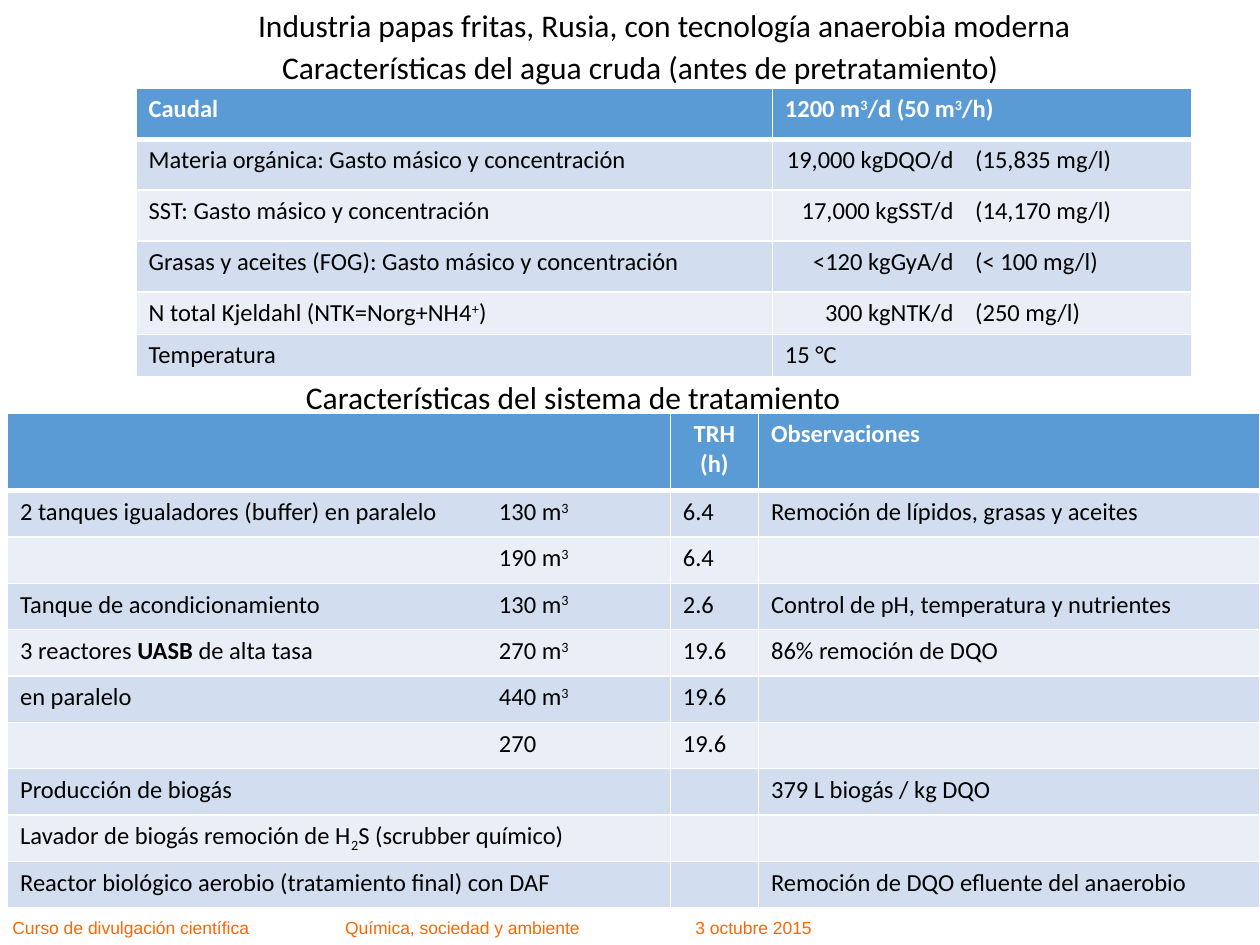
from dataclasses import dataclass
from lxml.etree import SubElement
from pptx import Presentation
from pptx.dml.color import RGBColor
from pptx.enum.text import PP_ALIGN
from pptx.oxml.ns import qn
from pptx.util import Inches, Pt


@dataclass(frozen=True)
class Theme:
    font: str = "Calibri"
    foot: str = "Arial"
    ink: str = "000000"
    white: str = "FFFFFF"
    orange: str = "FF6600"
    head: str = "5B9BD5"
    bands: tuple = ("D2DEEF", "EAEFF7")
    big: int = 18
    body: int = 14
    small: int = 10
    thin: int = 1
    thick: int = 3


@dataclass(frozen=True)
class Box:
    x: float
    y: float
    w: float
    h: float


@dataclass(frozen=True)
class Label:
    text: str
    box: Box
    size: int
    name: str
    color: str
    tabs: tuple = ()


@dataclass(frozen=True)
class Grid:
    box: Box
    cols: tuple
    rows: tuple
    cells: tuple
    tabs: dict
    mid: tuple = ()


THEME = Theme()
UNIT = 0.1
WIDE, HIGH = 100, 75
MARKS = {"^": {"baseline": "30000"}, "_": {"baseline": "-25000"}, "*": {"b": "1"}}


def span(n: float) -> int:
    return Inches(n * UNIT)


def place(box: Box) -> tuple:
    return tuple(span(n) for n in (box.x, box.y, box.w, box.h))


def write(frame, text: str, look: dict, tabs: tuple = (), align=PP_ALIGN.LEFT) -> None:
    para = frame.paragraphs[0]
    para.alignment = align
    if tabs:
        stops = SubElement(para._p.get_or_add_pPr(), qn("a:tabLst"))
        for pos, side in tabs:
            SubElement(stops, qn("a:tab"), pos=str(span(pos)), algn=side)
    for part in filter(None, text.split("|")):
        mark = MARKS.get(part[0], {})
        run = para.add_run()
        run.text = part[1:] if mark else part
        for key, val in look.items():
            if key == "color":
                run.font.color.rgb = RGBColor.from_string(val)
            else:
                setattr(run.font, key, val)
        for key, val in mark.items():
            run._r.get_or_add_rPr().set(key, val)
    SubElement(para._p, qn("a:endParaRPr"), sz=str(look["size"].centipoints))


def draw_label(slide, label: Label) -> None:
    frame = slide.shapes.add_textbox(*place(label.box)).text_frame
    frame.word_wrap = True
    look = {"size": Pt(label.size), "name": label.name, "color": label.color}
    write(frame, label.text, look, label.tabs)


def edge(cell, row: int) -> None:
    props = cell._tc.get_or_add_tcPr()
    heavy = {0: "lnB", 1: "lnT"}.get(row)
    for side in ("lnL", "lnR", "lnT", "lnB"):
        width = THEME.thick if side == heavy else THEME.thin
        line = SubElement(props, qn(f"a:{side}"), w=str(Pt(width)))
        fill = SubElement(line, qn("a:solidFill"))
        SubElement(fill, qn("a:srgbClr"), val=THEME.white)


def draw_grid(slide, grid: Grid) -> None:
    table = slide.shapes.add_table(len(grid.rows), len(grid.cols), *place(grid.box)).table
    for col, size in zip(table.columns, grid.cols):
        col.width = span(size)
    for row, size in zip(table.rows, grid.rows):
        row.height = span(size)
    for r, texts in enumerate(grid.cells):
        top = r == 0
        look = {
            "size": Pt(THEME.body),
            "name": THEME.font,
            "bold": top,
            "color": THEME.white if top else THEME.ink,
        }
        for c, text in enumerate(texts):
            cell = table.cell(r, c)
            edge(cell, r)
            cell.fill.solid()
            tint = THEME.head if top else THEME.bands[(r - 1) % 2]
            cell.fill.fore_color.rgb = RGBColor.from_string(tint)
            align = PP_ALIGN.CENTER if (r, c) in grid.mid else PP_ALIGN.LEFT
            write(cell.text_frame, text, look, grid.tabs.get(c, ()), align)


def title(text: str, x: float, y: float, w: float) -> Label:
    return Label(text, Box(x, y, w, 4), THEME.big, THEME.font, THEME.ink)


FOOT = Label(
    "Curso de divulgación científica\tQuímica, sociedad y ambiente\t3 octubre 2015",
    Box(0, 72.3, 73.8, 2.7), THEME.small, THEME.foot, THEME.orange,
    ((26.4, "l"), (54.2, "l")),
)
TITLES = (
    title("Industria papas fritas, Rusia, con tecnología anaerobia moderna", 19.5, 0, 77.9),
    title("Características del agua cruda (antes de pretratamiento)", 21.4, 3.3, 62.5),
    title("Características del sistema de tratamiento", 23.3, 29.5, 60.6),
)
WATER = Grid(
    Box(10.8, 7, 83.8, 22.9), (50.5, 33.3), (4.05,) * 4 + (3.35,) * 2,
    (
        ("Caudal", "1200 m|^3|/d (50 m|^3|/h)"),
        ("Materia orgánica: Gasto másico y concentración", "\t19,000 kgDQO/d\t(15,835 mg/l)"),
        ("SST: Gasto másico y concentración", "\t17,000 kgSST/d\t(14,170 mg/l)"),
        ("Grasas y aceites (FOG): Gasto másico y concentración", "\t<120 kgGyA/d\t(< 100 mg/l)"),
        ("N total Kjeldahl (NTK=Norg+NH4|^+|)", "\t300 kgNTK/d\t(250 mg/l)"),
        ("Temperatura", "15 °C"),
    ),
    {1: ((13.4, "r"), (15.1, "l"))},
)
PLANT = Grid(
    Box(0.6, 32.8, 99.4, 39.3), (52.6, 7, 39.8), (6.15,) + (3.68,) * 9,
    (
        ("", "TRH (h)", "Observaciones"),
        ("2 tanques igualadores (buffer) en paralelo\t130 m|^3", "6.4",
         "Remoción de lípidos, grasas y aceites"),
        ("\t190 m|^3", "6.4", ""),
        ("Tanque de acondicionamiento\t130 m|^3", "2.6",
         "Control de pH, temperatura y nutrientes"),
        ("3 reactores |*UASB| de alta tasa\t270 m|^3", "19.6", "86% remoción de DQO"),
        ("en paralelo\t440 m|^3", "19.6", ""),
        ("\t270", "19.6", ""),
        ("Producción de biogás", "", "379 L biogás / kg DQO"),
        ("Lavador de biogás remoción de H|_2|S (scrubber químico)", "", ""),
        ("Reactor biológico aerobio (tratamiento final) con DAF", "",
         "Remoción de DQO efluente del anaerobio"),
    ),
    {0: ((38, "l"),)},
    ((0, 1),),
)


def main() -> None:
    deck = Presentation()
    deck.slide_width, deck.slide_height = span(WIDE), span(HIGH)
    slide = deck.slides.add_slide(deck.slide_layouts[6])
    for label in (FOOT, *TITLES[:2]):
        draw_label(slide, label)
    for grid in (WATER, PLANT):
        draw_grid(slide, grid)
    draw_label(slide, TITLES[2])
    deck.save("out.pptx")


if __name__ == "__main__":
    main()
